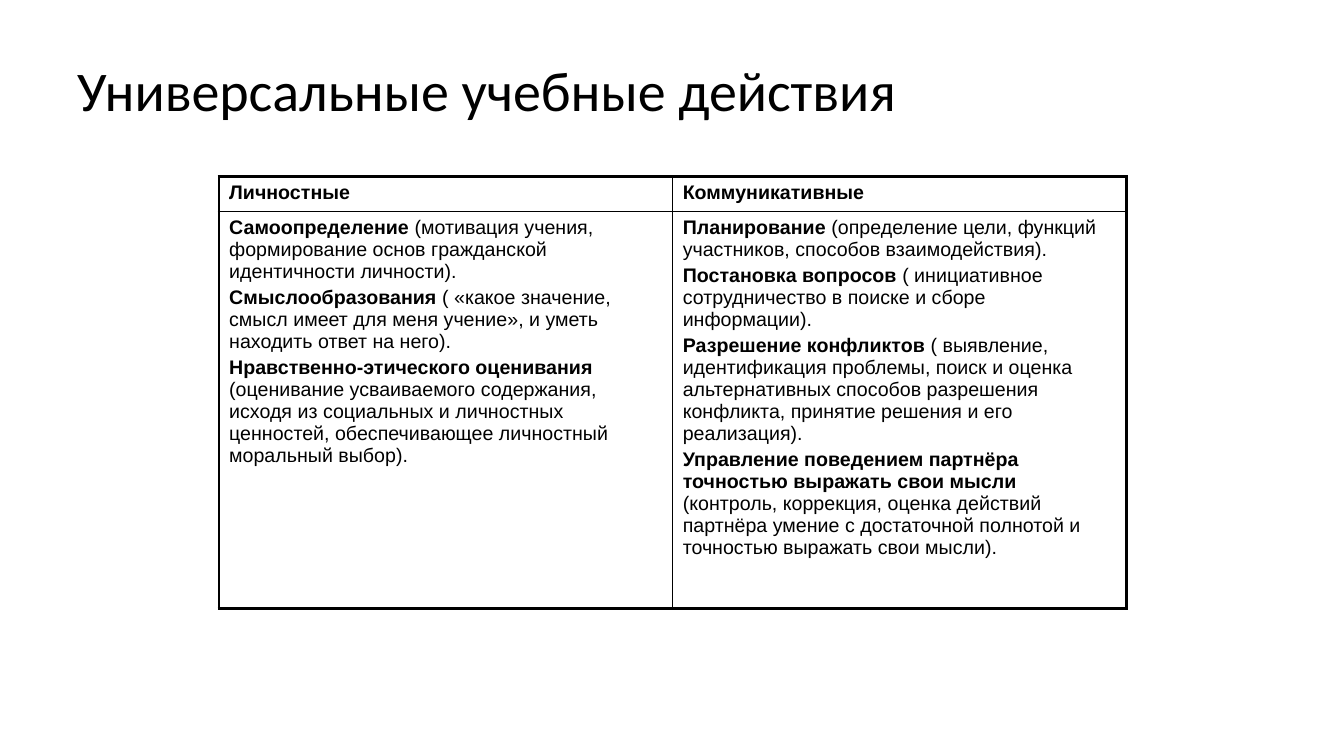
from lxml import etree
from pptx import Presentation
from pptx.dml.color import RGBColor
from pptx.enum.text import MSO_ANCHOR
from pptx.oxml.ns import qn
from pptx.util import Pt

MIDDLE = MSO_ANCHOR.MIDDLE
COLORS = {"ink": "000000"}
OUTER, INNER = 2.25, 1

HEADINGS = ["Личностные", "Коммуникативные"]
# Each action is a bold term followed by its explanation.
ACTIONS = [
    [
        ("Самоопределение ",
         "(мотивация учения, формирование основ гражданской идентичности личности)."),
        ("Смыслообразования ",
         "( «какое значение, смысл имеет для меня учение», и уметь находить ответ на него)."),
        ("Нравственно-этического оценивания ",
         "(оценивание усваиваемого содержания, исходя из социальных и личностных "
         "ценностей, обеспечивающее личностный моральный выбор)."),
    ],
    [
        ("Планирование ",
         "(определение цели, функций участников, способов взаимодействия)."),
        ("Постановка вопросов ",
         "( инициативное сотрудничество в поиске и сборе информации)."),
        ("Разрешение конфликтов ",
         "( выявление, идентификация проблемы, поиск и оценка альтернативных способов "
         "разрешения конфликта, принятие решения и его реализация)."),
        ("Управление поведением партнёра точностью выражать свои мысли ",
         "(контроль, коррекция, оценка действий партнёра умение с достаточной полнотой "
         "и точностью выражать свои мысли)."),
    ],
]


def write_text(frame, paragraphs, *, font, size, color="ink", line_spacing=None, gap=0):
    """Fill a frame; a paragraph is a tuple of (text, bold) runs."""
    for index, runs in enumerate(paragraphs):
        paragraph = frame.paragraphs[0] if index == 0 else frame.add_paragraph()
        paragraph.line_spacing = line_spacing
        paragraph.space_before = Pt(gap if index else 0)
        for text, bold in runs:
            run = paragraph.add_run()
            run.text = text
            run.font.name = font
            run.font.size = Pt(size)
            run.font.bold = bold
            run.font.color.rgb = RGBColor.from_string(COLORS[color])


def set_borders(cell, widths):
    """Draw cell borders; widths are in points, in order left, right, top, bottom."""
    properties = cell._tc.get_or_add_tcPr()
    for index, (side, width) in enumerate(zip("LRTB", widths)):
        line = etree.Element(qn(f"a:ln{side}"), w=str(int(Pt(width))))
        fill = etree.SubElement(line, qn("a:solidFill"))
        etree.SubElement(fill, qn("a:srgbClr"), val=COLORS["ink"])
        properties.insert(index, line)


def add_title(slide, text):
    frame = slide.shapes.add_textbox(Pt(48), Pt(21.6), Pt(864), Pt(90)).text_frame
    frame.word_wrap = True
    frame.vertical_anchor = MIDDLE
    write_text(frame, [((text, False),)], font="Calibri", size=40, line_spacing=0.9)


def add_actions_table(slide):
    rows = [
        [[((heading, True),)] for heading in HEADINGS],
        [[((term, True), (detail, False)) for term, detail in column]
         for column in ACTIONS],
    ]
    table = slide.shapes.add_table(
        len(rows), len(HEADINGS), Pt(156.5), Pt(126), Pt(648), Pt(308.8)).table
    table.first_row = False
    table.horz_banding = False
    for row, height in zip(table.rows, (25.2, 283.6)):
        row.height = Pt(height)

    for r, row in enumerate(rows):
        for c, paragraphs in enumerate(row):
            cell = table.cell(r, c)
            cell.fill.background()
            write_text(cell.text_frame, paragraphs, font="Arial", size=14, gap=2.8)
            on_edge = (c == 0, c == len(row) - 1, r == 0, r == len(rows) - 1)
            set_borders(cell, [OUTER if edge else INNER for edge in on_edge])


def main():
    presentation = Presentation()
    presentation.slide_width = Pt(960)
    presentation.slide_height = Pt(540)
    slide = presentation.slides.add_slide(presentation.slide_layouts[6])
    add_title(slide, "Универсальные учебные действия")
    add_actions_table(slide)
    presentation.save("out.pptx")


if __name__ == "__main__":
    main()
